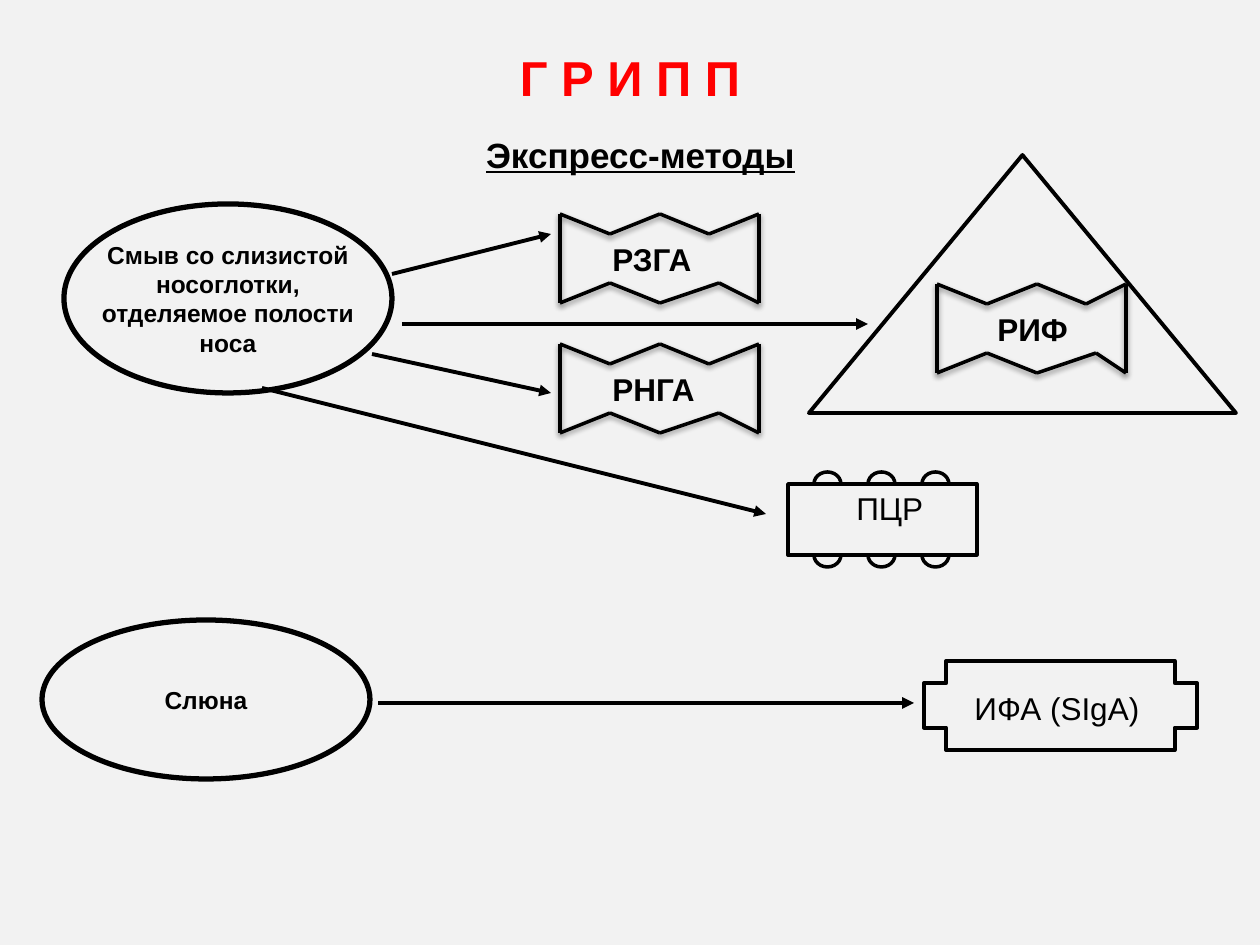
from itertools import pairwise

from lxml import etree
from pptx import Presentation
from pptx import util as u
from pptx.dml.color import RGBColor
from pptx.enum import shapes, text
from pptx.oxml import parse_xml
from pptx.oxml.ns import nsdecls, qn

EMU_PER_PX = 914400 / 126
BLACK, RED, PAPER = "000000", "FF0000", "F2F2F2"
SHADOW = (
    f'<a:effectLst {nsdecls("a")}><a:outerShdw blurRad="40000" dist="20000" dir="5400000" '
    'rotWithShape="0"><a:srgbClr val="000000"><a:alpha val="38000"/></a:srgbClr>'
    "</a:outerShdw></a:effectLst>"
)
NO_EFFECT = f'<a:effectLst {nsdecls("a")}/>'


def px(*lengths):
    return [u.Emu(round(length * EMU_PER_PX)) for length in lengths]


def color(hex_string):
    return RGBColor.from_string(hex_string)


def write(shape, words, size, bold=False, underline=False, font_color=BLACK,
          align=text.PP_ALIGN.LEFT, indent=0):
    """Put words in the shape; indent is the left margin of the text in px."""
    shape.text_frame.text = words
    for paragraph in shape.text_frame.paragraphs:
        paragraph.alignment = align
        if indent:
            properties = paragraph._p.get_or_add_pPr()
            properties.set("marL", str(px(indent)[0]))
            properties.set("indent", "0")
        for run in paragraph.runs:
            font = run.font
            font.name, font.size = "Arial", u.Pt(size)
            font.bold, font.underline = bold, underline
            font.color.rgb = color(font_color)


def add_label(slide, box, words, size=18, **style):
    label = slide.shapes.add_textbox(*px(*box))
    label.text_frame.word_wrap = True
    write(label, words, size, **style)


def add_outline(parent, kind, box, width, fill=None):
    shape = parent.shapes.add_shape(kind, *px(*box))
    shape.shadow.inherit = False
    if fill:
        shape.fill.solid()
        shape.fill.fore_color.rgb = color(fill)
    else:
        shape.fill.background()
    shape.line.color.rgb = color(BLACK)
    shape.line.width = u.Pt(width)
    return shape


def add_line(slide, start, end, width, effect=NO_EFFECT):
    line = slide.shapes.add_connector(shapes.MSO_CONNECTOR.STRAIGHT, *px(*start, *end))
    line.line.color.rgb = color(BLACK)
    line.line.width = u.Pt(width)
    line._element.spPr.append(parse_xml(effect))
    return line


def add_arrow(slide, start, end):
    arrow = add_line(slide, start, end, 2.25)
    etree.SubElement(arrow.line._get_or_add_ln(), qn("a:tailEnd"), type="triangle")


def add_headings(slide):
    title = slide.shapes.title
    title.left, title.top, title.width, title.height = px(63, 38, 1134, 77)
    title.text_frame.vertical_anchor = text.MSO_ANCHOR.MIDDLE
    write(title, "Г Р И П П", 28, bold=True, font_color=RED, align=text.PP_ALIGN.CENTER)
    add_label(slide, (333, 127, 615, 55), "Экспресс-методы", 20, bold=True,
              underline=True, align=text.PP_ALIGN.CENTER)


def add_sample(slide, box, words):
    """Oval that names the material taken from the patient."""
    oval = add_outline(slide, shapes.MSO_SHAPE.OVAL, box, 3)
    oval.text_frame.word_wrap = False
    oval.text_frame.vertical_anchor = text.MSO_ANCHOR.MIDDLE
    write(oval, words, 14, bold=True, align=text.PP_ALIGN.CENTER)


def add_ribbon(slide, box, words, label_left, indent=0):
    """Zigzag frame of single lines with the name of a reaction inside."""
    left, top, width, height = box
    notch = 20
    upper = [(left + x, top + notch * (i % 2))
             for i, x in enumerate((0, 50, 100, 149, width))]
    lower = [(left + x, top + height - notch * (i % 2))
             for i, x in enumerate((0, 50, 100, 159, width))]
    sides = zip((upper[0], upper[-1]), (lower[0], lower[-1]))
    for start, end in [*pairwise(upper), *pairwise(lower), *sides]:
        add_line(slide, start, end, 2, SHADOW)
    add_label(slide, (left + label_left, top + notch, 129, 50), words,
              bold=True, indent=indent)


def add_pcr(slide, box):
    left, top, width, height = box
    group = slide.shapes.add_group_shape()
    for edge in (top, top + height):
        for column in range(3):
            add_outline(group, shapes.MSO_SHAPE.OVAL,
                        (left + 26 + 54 * column, edge - 12, 27, 24), 2, PAPER)
    add_outline(group, shapes.MSO_SHAPE.RECTANGLE, box, 2, PAPER)
    add_label(slide, (left + 21, top - 1, 136, 108), "ПЦР", indent=35)


def add_elisa(slide, box):
    left, top, width, height = box
    add_outline(slide, shapes.MSO_SHAPE.CROSS, box, 2.25)
    add_label(slide, (left + 21, top + 22, 231, 50), "ИФА (SIgA)", indent=17)


def main():
    presentation = Presentation()
    presentation.slide_width, presentation.slide_height = px(1260, 945)
    slide = presentation.slides.add_slide(presentation.slide_layouts[5])
    slide.background.fill.solid()
    slide.background.fill.fore_color.rgb = color(PAPER)

    add_pcr(slide, (788, 484, 189, 71))
    add_headings(slide)
    add_sample(slide, (64, 204, 328, 189),
               "Смыв со слизистой\nносоглотки,\nотделяемое полости\nноса")
    add_sample(slide, (42, 620, 328, 159), "Слюна")
    add_ribbon(slide, (560, 214, 199, 89), "РЗГА", 40)
    add_ribbon(slide, (560, 344, 199, 89), "РНГА", 40)
    add_outline(slide, shapes.MSO_SHAPE.ISOSCELES_TRIANGLE, (809, 155, 427, 258), 2.25)
    add_ribbon(slide, (937, 284, 189, 89), "РИФ", 31, indent=17)
    add_elisa(slide, (924, 661, 273, 89))
    for start, end in (
        ((392, 274), (551, 234)),
        ((402, 324), (868, 324)),
        ((372, 354), (551, 393)),
        ((262, 388), (766, 514)),
        ((378, 703), (914, 703)),
    ):
        add_arrow(slide, start, end)
    presentation.save("out.pptx")


if __name__ == "__main__":
    main()
